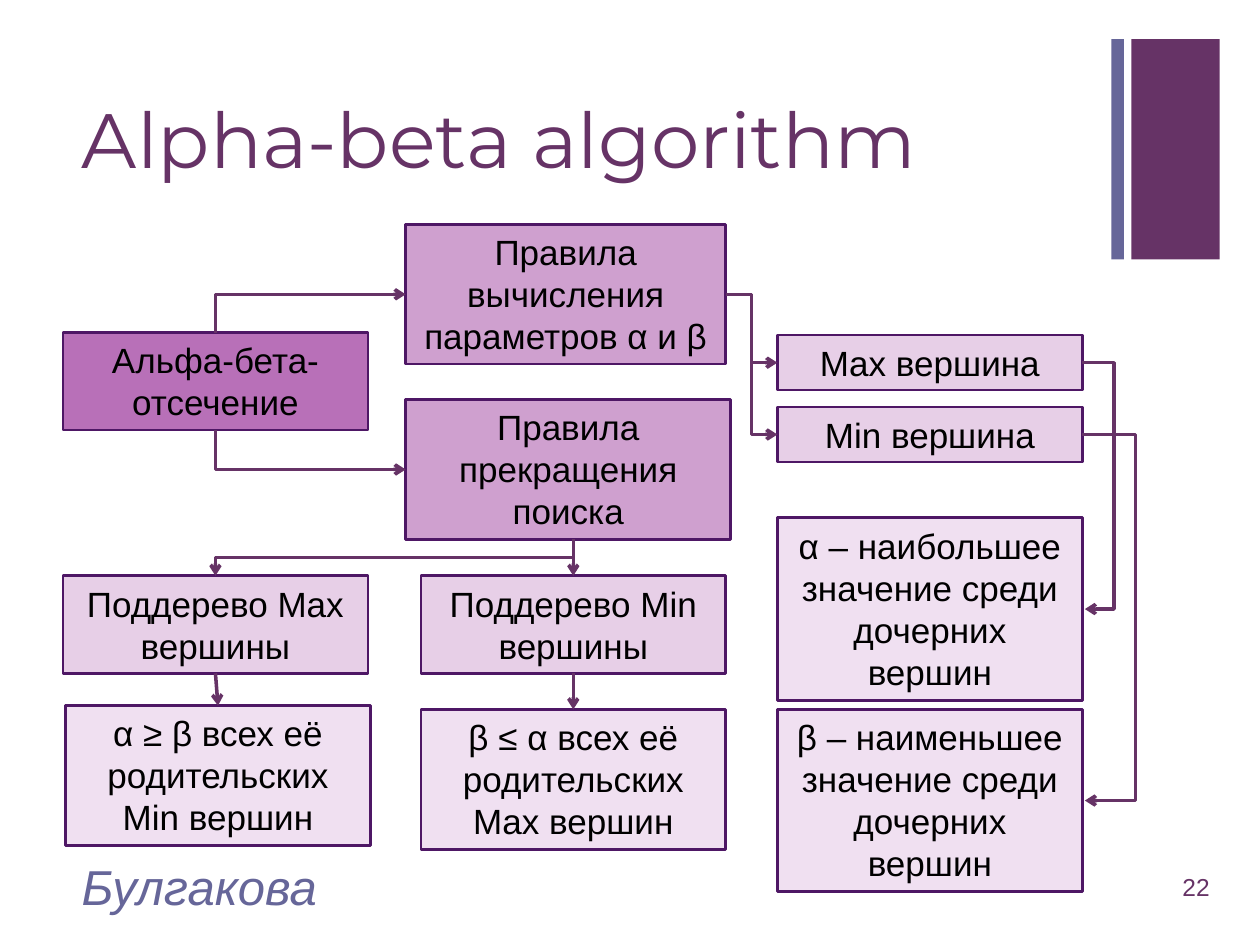
from pptx import Presentation
from pptx.dml.color import RGBColor
from pptx.enum.shapes import MSO_CONNECTOR as Link, MSO_SHAPE as Shape
from pptx.enum.text import MSO_ANCHOR as Anchor, MSO_AUTO_SIZE as Fit, PP_ALIGN as Align
from pptx.oxml.ns import qn
from pptx.util import Inches, Pt
from lxml.etree import SubElement

PLUM, SLATE, EDGE, BLACK = "663366", "666699", "4E1765", "000000"
ROOT, RULE, NODE, RESULT = "B870B8", "CFA0CF", "E7CFE7", "F0E0F1"
color = RGBColor.from_string


def write(shape, text, size=20, font="Arial", ink=BLACK, align=Align.LEFT,
          anchor=Anchor.MIDDLE, fit=Fit.NONE, italic=None, spacing=None):
    frame = shape.text_frame
    frame.word_wrap, frame.auto_size, frame.vertical_anchor = True, fit, anchor
    para = frame.paragraphs[0]
    para.alignment, para.line_spacing = align, spacing
    span = para.add_run()
    span.text = text
    span.font.size, span.font.name, span.font.italic = Pt(size), font, italic
    span.font.color.rgb = color(ink)


def arrow(start, end, kind=Link.ELBOW, preset=None, down_first=False, bend=None):
    """Arrow from start to end; bend is the x of the middle leg of an elbow."""
    (x1, y1), (x2, y2) = start, end
    dx, dy = x2 - x1, y2 - y1
    if down_first:  # lay the elbow on its side, then turn it about its centre
        cx, cy = (x1 + x2) / 2, (y1 + y2) / 2
        half = abs(dx) / 2 * (-1 if (dx > 0) == (dy > 0) else 1)
        x1, x2 = cx - abs(dy) / 2, cx + abs(dy) / 2
        y1, y2 = cy - half, cy + half
    line = page.shapes.add_connector(kind, *map(Inches, (x1, y1, x2, y2)))
    line.line.color.rgb, line.line.width = color(PLUM), Pt(2)
    props = line._element.spPr
    geometry = props.find(qn("a:prstGeom"))
    if preset:
        geometry.set("prst", preset)
    if down_first:
        props.find(qn("a:xfrm")).set("rot", str((90 if dy > 0 else 270) * 60000))
    if bend:
        share = round((bend - x1) / dx * 100000)
        SubElement(geometry.find(qn("a:avLst")), qn("a:gd"), name="adj1", fmla=f"val {share}")
    SubElement(props.find(qn("a:ln")), qn("a:tailEnd"), type="arrow")
    SubElement(props, qn("a:effectLst"))
    return line


deck = Presentation()
deck.slide_width, deck.slide_height = Inches(10), Inches(7.5)
page = deck.slides.add_slide(deck.slide_layouts[5])

# Corner bars
for left, width, fill in ((8.98, 0.7, PLUM), (8.82, 0.1, SLATE)):
    bar = page.shapes.add_shape(Shape.RECTANGLE, *map(Inches, (left, 0.31, width, 1.75)))
    bar.shadow.inherit = False
    bar.fill.solid()
    bar.fill.fore_color.rgb = color(fill)
    bar.line.fill.background()

# Title
title = page.shapes.title
title.left, title.top, title.width, title.height = map(Inches, (0.55, 0.53, 8.26, 1.22))
write(title, "Alpha-beta algorithm", size=44, font="Montserrat", ink=PLUM, spacing=0.9)

# Footer and page number
for area, text, look in (
    ((9.09, 6.84, 0.61, 0.4), "22", dict(size=14, ink=PLUM, align=Align.RIGHT)),
    ((0.55, 6.83, 6.7, 0.4), "Булгакова", dict(size=28, ink=SLATE, italic=True)),
):
    write(page.shapes.add_textbox(*map(Inches, area)), text, **look)

# Boxes: three columns, heights follow the number of text lines
COL = (0.5, 3.34, 6.17)
WIDE_COL, WIDTH = 3.22, 2.42
PAD, LINE = 0.1, 0.337
BOXES = {
    "root": (COL[0], 2.64, WIDTH, 2, ROOT, "Альфа-бета-отсечение"),
    "values": (WIDE_COL, 1.78, 2.54, 3, RULE, "Правила вычисления параметров α и β"),
    "stop": (WIDE_COL, 3.17, 2.58, 3, RULE, "Правила прекращения поиска"),
    "max": (COL[2], 2.66, WIDTH, 1, NODE, "Max вершина"),
    "min": (COL[2], 3.23, WIDTH, 1, NODE, "Min вершина"),
    "alpha": (COL[2], 4.11, WIDTH, 4, RESULT, "α – наибольшее значение среди дочерних вершин"),
    "beta": (COL[2], 5.63, WIDTH, 4, RESULT, "β – наименьшее значение среди дочерних вершин"),
    "max tree": (COL[0], 4.57, WIDTH, 2, NODE, "Поддерево Max вершины"),
    "min tree": (COL[1], 4.57, WIDTH, 2, NODE, "Поддерево Min вершины"),
    "max cut": (0.52, 5.6, WIDTH, 3, RESULT, "α ≥ β всех её родительских Min вершин"),
    "min cut": (COL[1], 5.63, WIDTH, 3, RESULT, "β ≤ α всех её родительских Max вершин"),
}
boxes, top, left, bottom, right = {}, {}, {}, {}, {}
for name, (x, y, width, lines, fill, text) in BOXES.items():
    height = PAD + LINE * lines
    box = page.shapes.add_shape(Shape.RECTANGLE, *map(Inches, (x, y, width, height)))
    box.shadow.inherit = False
    box.fill.solid()
    box.fill.fore_color.rgb = color(fill)
    box.line.color.rgb, box.line.width = color(EDGE), Pt(1.5)
    write(box, text, align=Align.CENTER, anchor=Anchor.TOP, fit=Fit.SHAPE_TO_FIT_TEXT)
    boxes[name] = box
    top[name], bottom[name] = (x + width / 2, y), (x + width / 2, y + height)
    left[name], right[name] = (x, y + height / 2), (x + width, y + height / 2)

# Root to the two rule sets
arrow(top["root"], left["values"], preset="bentConnector2", down_first=True)
arrow(bottom["root"], left["stop"], preset="bentConnector2", down_first=True)

# Value rules to the node kinds, and on to their definitions
for node in ("max", "min"):
    arrow(right["values"], left[node])
for node, result, bend in (("max", "alpha", 8.84), ("min", "beta", 9.01)):
    x, y = right[result]
    arrow(right[node], (x + 0.02, y), bend=bend)

# Stop rules to the subtrees, leaving above the Min subtree's centre
fork = (top["min tree"][0], bottom["stop"][1])
arrow(fork, top["max tree"], down_first=True)
arrow(fork, top["min tree"], Link.STRAIGHT).end_connect(boxes["min tree"], 0)

# Subtrees to their cut-off conditions
for tree, cut in (("max tree", "max cut"), ("min tree", "min cut")):
    line = arrow(bottom[tree], top[cut], Link.STRAIGHT)
    line.begin_connect(boxes[tree], 2)
    line.end_connect(boxes[cut], 0)

deck.save("out.pptx")
